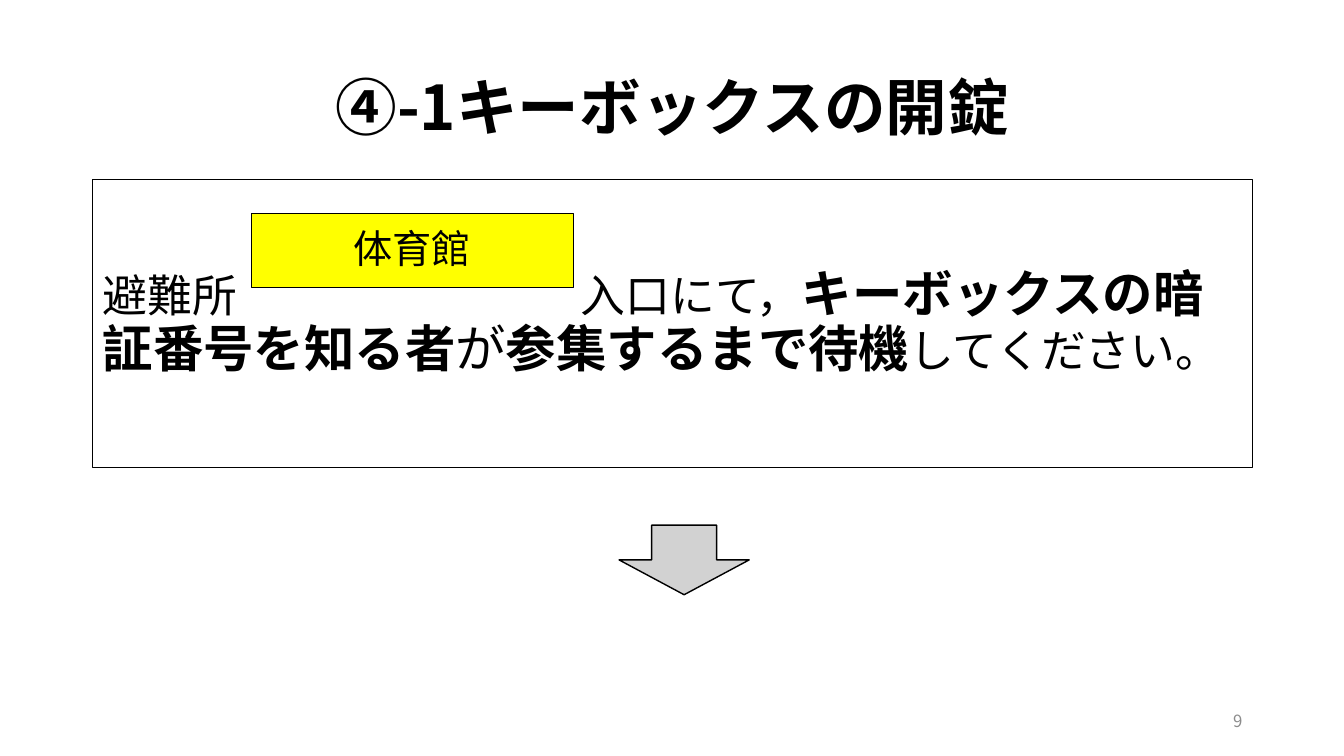
from lxml.etree import SubElement
from pptx import Presentation
from pptx.dml.color import RGBColor
from pptx.enum.shapes import MSO_SHAPE
from pptx.enum.text import MSO_ANCHOR, PP_ALIGN
from pptx.oxml.ns import qn
from pptx.util import Inches, Pt

# Content
FONT = "Noto Sans CJK JP"
TITLE = [("④-1キーボックスの開錠", 44, True)]
INSTRUCTION = [
    ("避難所\t", 32, False),
    ("入口にて，", 32, False),
    ("キーボックスの暗証番号を知る者", 36, True),
    ("が", 36, False),
    ("参集するまで待機", 36, True),
    ("してください。", 32, False),
]
PLACE = [("体育館", 28, False)]
PAGE = [("9", 12, False)]

# Layout: left, top, width, height
TITLE_BOX = (0.92, 0.4, 11.5, 1.39)
INSTRUCTION_BOX = (0.92, 1.78, 11.5, 2.86)
PLACE_BOX = (2.49, 2.12, 3.2, 0.73)
PAGE_BOX = (9.42, 6.95, 3, 0.4)
ARROW_BOX = (6.14, 5.21, 1.29, 0.69)
TAB_AFTER_PLACE = 4.74  # leaves room for the yellow place label


def rgb(color):
    return RGBColor.from_string(color)


def add_text(sp, runs, align=PP_ALIGN.LEFT, color="000000", spacing=0.9,
             before=0, tab=None):
    tf = sp.text_frame
    tf.word_wrap = True
    tf.vertical_anchor = MSO_ANCHOR.MIDDLE
    p = tf.paragraphs[0]
    p.alignment = align
    p.line_spacing = spacing
    p.space_before = Pt(before)
    if tab:
        tabs = SubElement(p._p.get_or_add_pPr(), qn("a:tabLst"))
        SubElement(tabs, qn("a:tab"), pos=str(Inches(tab)), algn="l")
    for text, size, bold in runs:
        r = p.add_run()
        r.text = text
        r.font.size = Pt(size)
        r.font.bold = bold
        r.font.name = FONT
        r.font.color.rgb = rgb(color)
        SubElement(r._r.get_or_add_rPr(), qn("a:ea"), typeface=FONT)


def add_box(s, kind, box, fill, line_width, alpha=None):
    sp = s.shapes.add_shape(kind, *map(Inches, box))
    sp.shadow.inherit = False
    sp.fill.solid()
    sp.fill.fore_color.rgb = rgb(fill)
    sp.line.color.rgb = rgb("000000")
    sp.line.width = Pt(line_width)
    if alpha:
        clr = sp._element.spPr.find(qn("a:solidFill"))[0]
        SubElement(clr, qn("a:alpha"), val=str(alpha * 1000))
    return sp


prs = Presentation()
prs.slide_width, prs.slide_height = Inches(13.33), Inches(7.5)
s = prs.slides.add_slide(prs.slide_layouts[6])

# Title
add_text(s.shapes.add_textbox(*map(Inches, TITLE_BOX)), TITLE,
         align=PP_ALIGN.CENTER)

# Instruction
sp = add_box(s, MSO_SHAPE.RECTANGLE, INSTRUCTION_BOX, "FFFFFF", 0.75)
add_text(sp, INSTRUCTION, before=10, tab=TAB_AFTER_PLACE)

# Page number
add_text(s.shapes.add_textbox(*map(Inches, PAGE_BOX)), PAGE,
         align=PP_ALIGN.RIGHT, color="8C8C8C", spacing=1.0)

# Arrow to the next step
add_box(s, MSO_SHAPE.DOWN_ARROW, ARROW_BOX, "A6A6A6", 1, alpha=50)

# Place label
sp = add_box(s, MSO_SHAPE.RECTANGLE, PLACE_BOX, "FFFF00", 0.75)
add_text(sp, PLACE, align=PP_ALIGN.CENTER, before=10)

prs.save("out.pptx")
